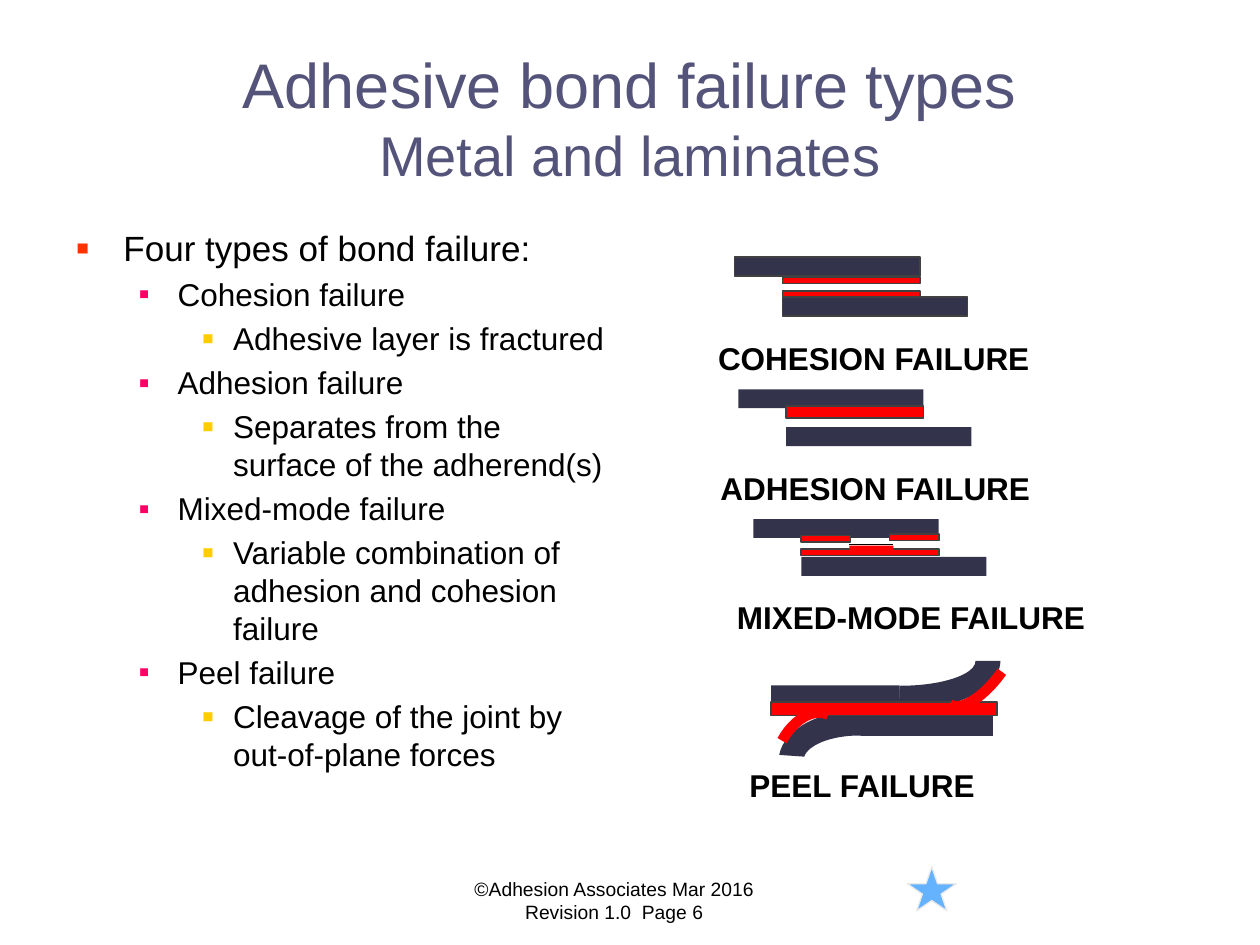
from dataclasses import dataclass

from lxml.etree import SubElement
from pptx import Presentation
from pptx.dml.color import RGBColor
from pptx.enum.shapes import MSO_CONNECTOR as CONN, MSO_SHAPE as SHAPE
from pptx.enum.text import MSO_ANCHOR as ANCHOR, MSO_AUTO_SIZE as AUTO, PP_ALIGN as ALIGN
from pptx.oxml.ns import qn
from pptx.util import Inches, Pt


@dataclass(frozen=True)
class Theme:
    font: str = "Arial"
    title: str = "54547A"
    text: str = "000000"
    adherend: str = "33334C"
    adhesive: str = "FF0000"
    outline: str = "414141"
    star: str = "65B2FF"
    star_line: str = "EAEAEA"
    title_sizes: tuple = (36, 32)
    label_size: int = 18
    footer_size: int = 11
    levels: tuple = (
        (20, 0.38, -0.38, "FF3300", 115),
        (18, 0.81, -0.31, "FF0066", 100),
        (18, 1.25, -0.25, "FFCC00", 115),
    )


class SlideBuilder:
    def __init__(self, slide, theme):
        self.slide = slide
        self.theme = theme

    def place(self, sp, box):
        sp.left, sp.top, sp.width, sp.height = map(Inches, box)

    def style(self, p, size, color, bold=False):
        for r in p.runs:
            r.font.name = self.theme.font
            r.font.size = Pt(size)
            r.font.bold = bold
            r.font.color.rgb = RGBColor.from_string(color)

    def title(self, box, lines):
        sp = self.slide.shapes.title
        self.place(sp, box)
        tf = sp.text_frame
        tf.text = "\n".join(lines)
        tf.auto_size = AUTO.NONE
        tf.vertical_anchor = ANCHOR.MIDDLE
        for p, size in zip(tf.paragraphs, self.theme.title_sizes):
            p.alignment = ALIGN.CENTER
            self.style(p, size, self.theme.title)

    def bullet(self, p, left, indent, color, percent):
        pPr = p._p.get_or_add_pPr()
        pPr.set("marL", str(Inches(left)))
        pPr.set("indent", str(Inches(indent)))
        SubElement(SubElement(pPr, qn("a:buClr")), qn("a:srgbClr"), val=color)
        SubElement(pPr, qn("a:buSzPct"), val=str(percent * 1000))
        SubElement(pPr, qn("a:buFont"), typeface=self.theme.font)
        SubElement(pPr, qn("a:buChar"), char="▪")

    def body(self, box, items):
        sp = self.slide.placeholders[1]
        self.place(sp, box)
        tf = sp.text_frame
        tf.text = "\n".join(text for _, text in items)
        tf.auto_size = AUTO.NONE
        for p, (level, _) in zip(tf.paragraphs, items):
            size, *marker = self.theme.levels[level]
            p.level = level
            self.bullet(p, *marker)
            self.style(p, size, self.theme.text)
        tf.paragraphs[0].space_before = Pt(0)

    def text(self, box, text, size, bold=False, align=ALIGN.LEFT, wrap=False):
        sp = self.slide.shapes.add_textbox(*map(Inches, box))
        tf = sp.text_frame
        tf.text = text
        tf.word_wrap = wrap
        for p in tf.paragraphs:
            p.alignment = align
            self.style(p, size, self.theme.text, bold)

    def label(self, left, top, width, text):
        self.text((left, top, width, 0.4), text, self.theme.label_size, bold=True)

    def shape(self, kind, box, fill=None, line=None, weight=1, rotation=0, flip=False, adj=()):
        sp = self.slide.shapes.add_shape(kind, *map(Inches, box))
        sp.shadow.inherit = False
        sp.rotation = rotation
        if flip:
            sp.element.spPr.xfrm.set("flipV", "1")
        for i, value in enumerate(adj):
            sp.adjustments[i] = value
        if fill:
            sp.fill.solid()
            sp.fill.fore_color.rgb = RGBColor.from_string(fill)
        else:
            sp.fill.background()
        if line:
            sp.line.color.rgb = RGBColor.from_string(line)
            sp.line.width = Pt(weight)
        else:
            sp.line.fill.background()

    def adherend(self, left, top, width=1.47, height=0.15, line=None):
        self.shape(SHAPE.RECTANGLE, (left, top, width, height), self.theme.adherend, line)

    def adhesive(self, left, top, width=1.09, height=0.05, outlined=True):
        line = self.theme.outline if outlined else None
        self.shape(SHAPE.RECTANGLE, (left, top, width, height), self.theme.adhesive, line)

    def lap_joint(self, left, upper, lower, line=None):
        overlap = left + 0.38
        self.adherend(left, upper, line=line)
        self.adherend(overlap, lower, line=line)
        return overlap

    def curved_adherend(self, box, adj, rotation=0):
        self.shape(SHAPE.BLOCK_ARC, box, self.theme.adherend, rotation=rotation, flip=True, adj=adj)

    def peeled_adhesive(self, box, rotation):
        self.shape(SHAPE.ARC, box, line=self.theme.adhesive, weight=6, rotation=rotation)

    def line(self, x1, y1, x2, y2, color, weight):
        c = self.slide.shapes.add_connector(CONN.STRAIGHT, *map(Inches, (x1, y1, x2, y2)))
        c.line.color.rgb = RGBColor.from_string(color)
        c.line.width = Pt(weight)
        SubElement(c.element.spPr, qn("a:effectLst"))


def main():
    theme = Theme()
    prs = Presentation()
    prs.slide_width, prs.slide_height = Inches(10), Inches(7.5)
    s = SlideBuilder(prs.slides.add_slide(prs.slide_layouts[1]), theme)

    s.title((0.5, 0.3, 9, 1.25), ["Adhesive bond failure types", "Metal and laminates"])
    s.body((0.5, 1.75, 4.41, 4.92), [
        (0, "Four types of bond failure:"),
        (1, "Cohesion failure"),
        (2, "Adhesive layer is fractured"),
        (1, "Adhesion failure"),
        (2, "Separates from the surface of the adherend(s)"),
        (1, "Mixed-mode failure"),
        (2, "Variable combination of adhesion and cohesion failure"),
        (1, "Peel failure"),
        (2, "Cleavage of the joint by out-of-plane forces"),
    ])

    overlap = s.lap_joint(5.83, 2.04, 2.36, line=theme.outline)
    for top in (2.2, 2.31):
        s.adhesive(overlap, top)
    s.label(5.6, 2.64, 2.68, "COHESION FAILURE")

    overlap = s.lap_joint(5.86, 3.09, 3.39)
    s.adhesive(overlap, 3.22, height=0.1)
    s.label(5.62, 3.67, 2.67, "ADHESION FAILURE")

    overlap = s.lap_joint(5.98, 4.12, 4.42)
    s.adhesive(overlap, 4.36)
    s.adhesive(overlap, 4.25, width=0.39)
    s.adhesive(overlap + 0.7, 4.24, width=0.39)
    s.adhesive(6.74, 4.33, width=0.35, outlined=False)
    s.line(6.74, 4.32, 7.09, 4.32, theme.text, 0.75)
    s.label(5.75, 4.7, 2.98, "MIXED-MODE FAILURE")

    s.adherend(6.12, 5.44, width=1.02, height=0.17)
    s.curved_adherend((6.35, 4.85, 1.59, 0.79), (161.09, 0, 0.25))
    s.adherend(6.83, 5.64, width=1.05, height=0.2)
    s.curved_adherend((6.18, 5.64, 1.28, 0.79), (160.03, 213.65, 0.25), rotation=180)
    s.adhesive(6.12, 5.57, width=1.79, height=0.11)
    s.peeled_adhesive((6.05, 5.76, 0.71, 0.45), 298.3)
    s.peeled_adhesive((7.35, 5.04, 0.9, 0.37), 125.4)
    s.label(5.85, 6.03, 2, "PEEL FAILURE")

    s.text((3.3, 6.91, 3.15, 0.52), "©Adhesion Associates Mar 2016\nRevision 1.0  Page 6",
           theme.footer_size, align=ALIGN.CENTER, wrap=True)
    s.shape(SHAPE.STAR_5_POINT, (7.2, 6.88, 0.39, 0.35), theme.star, theme.star_line, 0.75)
    prs.save("out.pptx")


if __name__ == "__main__":
    main()
